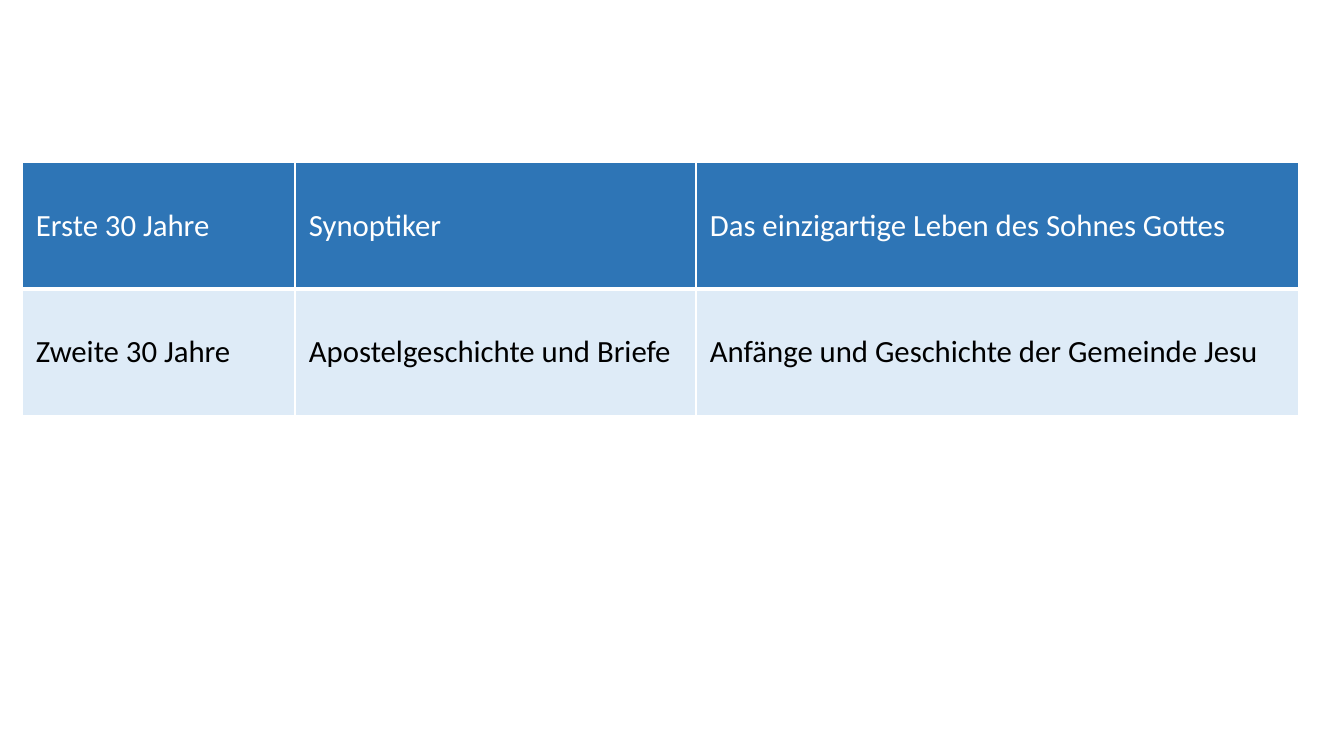
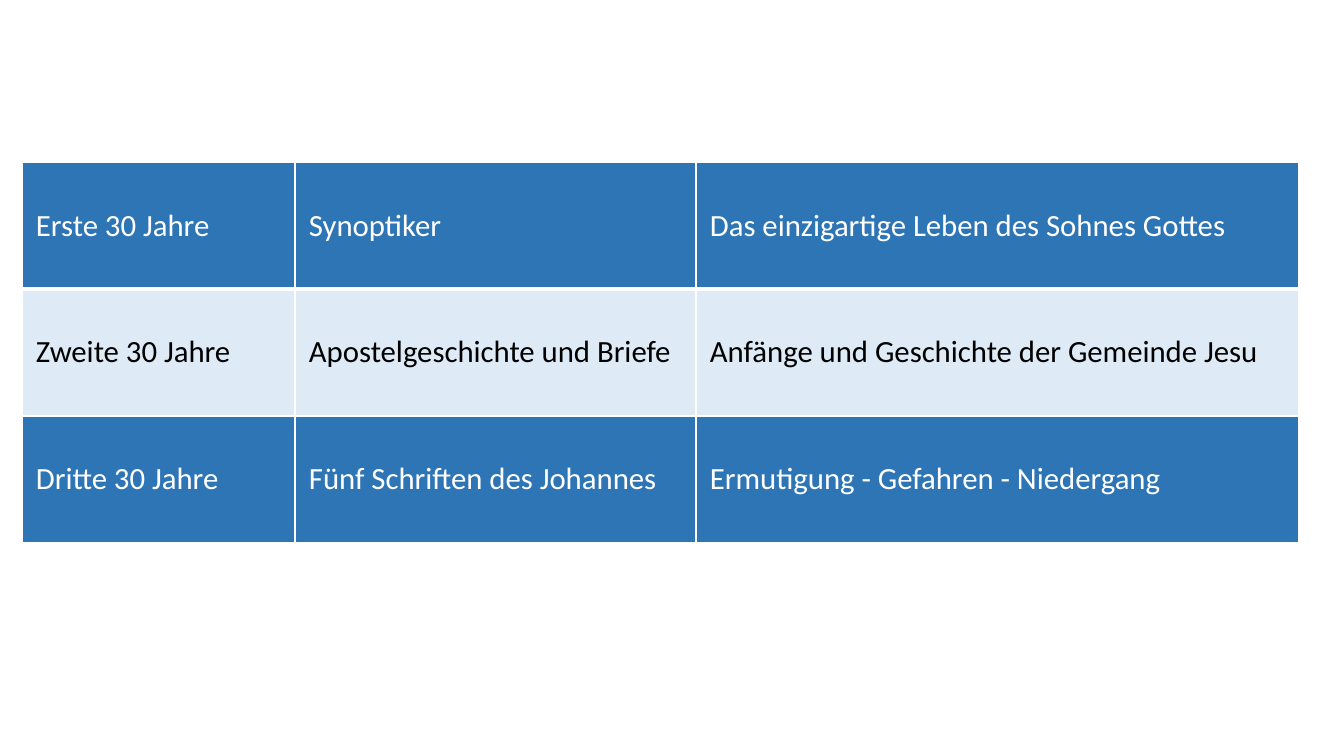
import pptx
import pptx.dml.color
import pptx.enum.text
import pptx.oxml
import pptx.oxml.ns
import pptx.util

# Shared look
PX = 914400 / 100.8
BLUE, PALE, WHITE, BLACK = "2E75B6", "DEEBF7", "FFFFFF", "000000"
FONT = {"name": "Calibri", "size": pptx.util.Pt(22), "bold": False}
LEFT, TOP = 22, 162
COLS = (273, 401, 603)
ROW_H = 127
INSET = 14

PERIODS = [
    ("Erste 30 Jahre", "Synoptiker", "Das einzigartige Leben des Sohnes Gottes"),
    ("Zweite 30 Jahre", "Apostelgeschichte und Briefe",
     "Anfänge und Geschichte der Gemeinde Jesu"),
    ("Dritte 30 Jahre", "Fünf Schriften des Johannes",
     "Ermutigung - Gefahren - Niedergang"),
]


def px(n):
    return pptx.util.Emu(round(n * PX))


def rgb(value):
    return pptx.dml.color.RGBColor.from_string(value)


def set_borders(cell, widths):
    """Draw white cell edges; widths maps L, R, T, B to points."""
    tc_pr = cell._tc.get_or_add_tcPr()
    for i, (side, width) in enumerate(widths.items()):
        line = pptx.oxml.parse_xml(
            f'<a:ln{side} {pptx.oxml.ns.nsdecls("a")} w="{pptx.util.Pt(width)}">'
            f'<a:solidFill><a:srgbClr val="{WHITE}"/></a:solidFill></a:ln{side}>')
        tc_pr.insert(i, line)


def fill_cell(cell, text, fill, color):
    cell.fill.solid()
    cell.fill.fore_color.rgb = rgb(fill)
    layout = {"margin_left": px(INSET), "margin_right": px(INSET),
              "margin_top": 0, "margin_bottom": 0,
              "vertical_anchor": pptx.enum.text.MSO_ANCHOR.MIDDLE}
    for name, value in layout.items():
        setattr(cell, name, value)
    r = cell.text_frame.paragraphs[0].add_run()
    r.text = text
    for name, value in FONT.items():
        setattr(r.font, name, value)
    r.font.color.rgb = rgb(color)


def add_period_table(s, rows):
    frame = s.shapes.add_table(len(rows), len(COLS), px(LEFT), px(TOP),
                               px(sum(COLS)), px(ROW_H * len(rows)))
    table = frame.table
    table.first_row = table.horz_banding = False
    for column, width in zip(table.columns, COLS):
        column.width = px(width)
    for i, texts in enumerate(rows):
        table.rows[i].height = px(ROW_H)
        # Blue and pale rows alternate; a thick rule follows the first row
        fill, color = (PALE, BLACK) if i % 2 else (BLUE, WHITE)
        widths = {"L": 1, "R": 1, "T": 3 if i == 1 else 1, "B": 3 if i == 0 else 1}
        for j, text in enumerate(texts):
            fill_cell(table.cell(i, j), text, fill, color)
            set_borders(table.cell(i, j), widths)


def main():
    prs = pptx.Presentation()
    prs.slide_width, prs.slide_height = px(1344), px(756)
    # The table gains one period from slide to slide
    for count in (2, 3):
        s = prs.slides.add_slide(prs.slide_layouts[6])
        add_period_table(s, PERIODS[:count])
    prs.save("out.pptx")


if __name__ == "__main__":
    main()
